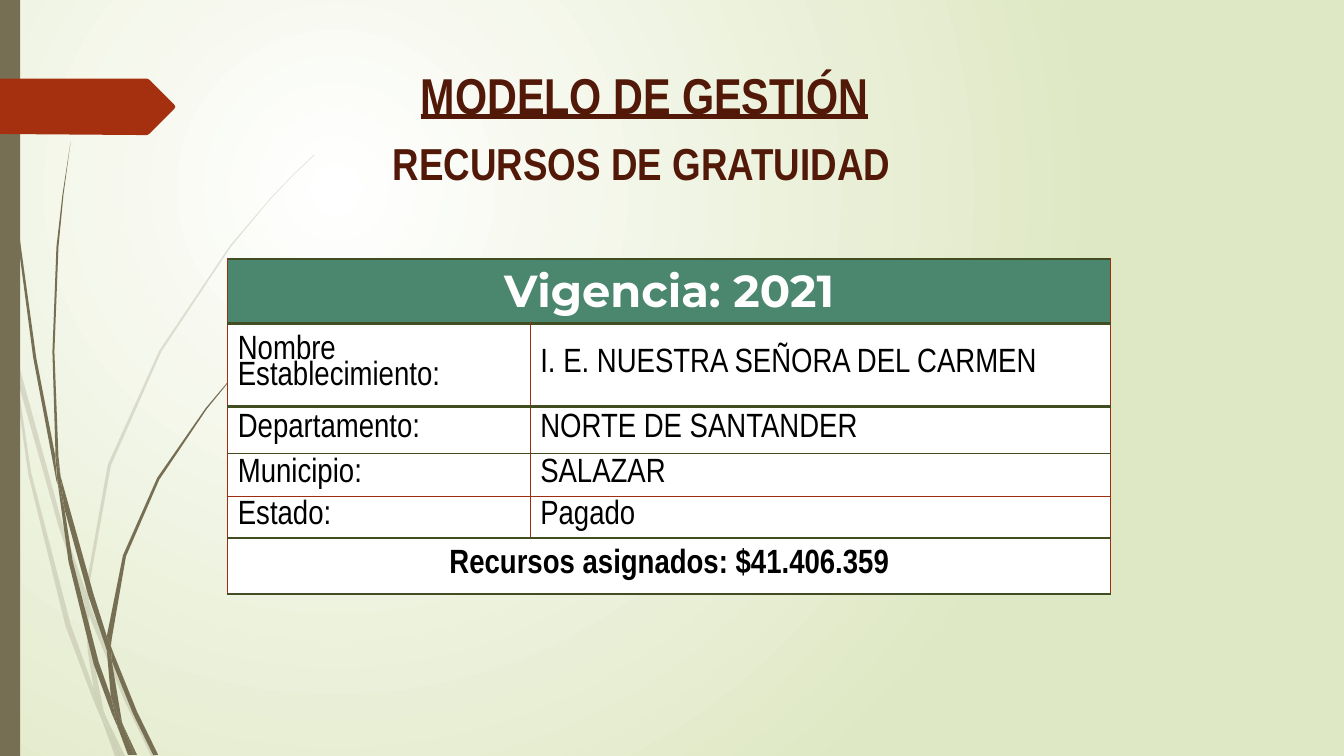
"""Build the slide on resources assigned to a school."""
import pptx
import pptx.dml.color
import pptx.enum.shapes
import pptx.enum.text
import pptx.oxml
import pptx.oxml.ns
import pptx.util
from lxml import etree

Pt = pptx.util.Pt
RGBColor = pptx.dml.color.RGBColor
ALIGN = pptx.enum.text.PP_ALIGN
ANCHOR = pptx.enum.text.MSO_ANCHOR
qn = pptx.oxml.ns.qn

WHITE = RGBColor(0xFF, 0xFF, 0xFF)
BLACK = RGBColor(0x00, 0x00, 0x00)
PALE_GREEN = RGBColor(0xDF, 0xE8, 0xC4)
OLIVE = RGBColor(0x76, 0x6F, 0x54)
RED = RGBColor(0xA5, 0x30, 0x10)
RULE_RED = RGBColor(0x9E, 0x2E, 0x0F)
RULE_GREEN = RGBColor(0x42, 0x4D, 0x22)
HEADER_GREEN = RGBColor(0x4B, 0x86, 0x6E)
MAROON = RGBColor(0x52, 0x18, 0x08)

OUTLINE_UNIT = Pt(0.72)
PALE_STRANDS = [
    [(11, 350), (9, 322), (0, 282), (0, 299), (10, 344)],
    [(58, 522), (84, 599), (85, 586), (62, 520), (14, 345), (17, 376)],
    [(92, 607), (88, 596), (88, 610), (123, 694), (150, 750), (155, 750), (127, 692)],
    [(119, 750), (124, 750), (105, 711)],
    [(93, 683), (70, 619), (31, 469), (17, 376), (11, 350), (28, 470), (65, 621),
     (92, 693), (101, 714), (99, 707)],
    [(84, 599), (87, 646), (93, 683), (96, 692), (105, 711), (103, 706), (91, 646),
     (88, 610), (88, 608)],
    [(88, 584), (110, 462), (160, 349), (229, 245), (268, 198), (290, 175), (312, 154),
     (312, 153), (289, 175), (268, 197), (228, 244), (158, 348), (107, 461), (85, 584),
     (85, 586), (88, 596)],
    [(101, 714), (114, 750), (119, 750)],
    [(88, 608), (88, 610), (88, 596), (85, 586), (84, 599)],
    [(96, 692), (93, 683), (99, 707), (101, 714), (119, 750), (105, 711)],
]
DARK_STRANDS = [
    [(7, 110), (17, 233), (33, 355), (56, 477), (57, 481), (55, 457), (55, 453),
     (36, 355), (19, 232), (8, 109), (5, 48), (4, 0), (3, 0), (4, 48)],
    [(88, 592), (106, 645), (106, 633), (106, 631), (93, 590), (60, 472), (64, 505)],
    [(113, 649), (110, 641), (111, 656), (132, 708), (152, 749), (157, 749), (136, 706)],
    [(110, 691), (98, 657), (72, 556), (64, 505), (57, 477), (68, 557), (93, 659),
     (111, 708), (117, 722), (116, 717)],
    [(60, 472), (58, 453), (54, 349), (58, 245), (63, 193), (70, 141), (62, 193),
     (56, 245), (52, 349), (55, 449)],
    [(133, 749), (136, 749), (122, 719)],
    [(57, 477), (64, 505), (60, 472), (55, 449), (55, 453)],
    [(111, 633), (125, 552), (158, 476), (205, 406), (231, 374), (245, 359), (261, 344),
     (260, 344), (245, 358), (231, 373), (204, 405), (156, 474), (122, 551), (106, 631),
     (110, 641)],
    [(117, 722), (127, 749), (131, 749)],
    [(106, 645), (110, 691), (116, 706), (122, 719), (121, 716), (111, 656), (109, 651)],
    [(106, 645), (109, 651), (111, 656), (110, 641), (106, 631), (106, 633)],
    [(116, 706), (110, 691), (116, 717), (117, 722), (130, 749), (133, 749), (122, 719)],
]
ARROW = [(173, 108), (148, 133), (146, 134), (136, 134), (0, 133), (0, 78), (136, 78),
         (146, 78), (148, 79), (173, 104), (174, 106)]

COLUMN_WIDTHS = [216, 414.7]
ROW_HEIGHTS = [46, 59, 33.5, 30.7, 30, 40]
ROW_RULES = [(RULE_GREEN, 1.5), (RULE_GREEN, 2.25), (RULE_GREEN, 2.25), (RULE_GREEN, 0.75),
             (RULE_RED, 0.75), (RULE_GREEN, 1.5), (RULE_GREEN, 2.25)]
ROWS = [
    ["Vigencia: 2021"],
    ["Nombre Establecimiento:", "I. E. NUESTRA SEÑORA DEL CARMEN"],
    ["Departamento:", "NORTE DE SANTANDER"],
    ["Municipio:", "SALAZAR"],
    ["Estado:", "Pagado"],
    ["Recursos asignados: $41.406.359"],
]


def paint_background(page):
    """Fill the page with a radial gradient centred in its upper left quarter."""
    fill = page.background.fill
    fill.gradient()
    for stop, color in zip(fill.gradient_stops, (WHITE, PALE_GREEN)):
        stop.color.rgb = color
    gradient = page.element.find(".//" + qn("a:gradFill"))
    gradient.remove(gradient.find(qn("a:lin")))
    circle = etree.SubElement(gradient, qn("a:path"), path="circle")
    etree.SubElement(circle, qn("a:fillToRect"), l="25000", t="25000", r="75000", b="75000")


def paint_shape(shape, color, opacity=100):
    """Give a shape a plain fill without line or shadow."""
    shape.shadow.inherit = False
    shape.fill.solid()
    shape.fill.fore_color.rgb = color
    shape.line.fill.background()
    if opacity < 100:
        tint = shape.element.spPr.find(qn("a:solidFill"))[0]
        etree.SubElement(tint, qn("a:alpha"), val=str(opacity * 1000))


def add_outline(page, points, color, opacity=100):
    """Draw a closed outline through the points."""
    builder = page.shapes.build_freeform(*points[0], scale=OUTLINE_UNIT)
    builder.add_line_segments(points[1:], close=True)
    paint_shape(builder.convert_to_shape(), color, opacity)


def format_text(para, size, color, font="Arial Narrow", bold=True, underline=False):
    """Format every run of a paragraph."""
    for span in para.runs:
        span.font.name = font
        span.font.size = Pt(size)
        span.font.bold = bold
        span.font.underline = underline
        span.font.color.rgb = color


def add_heading(page, text, left, top, width, height, size, align, anchor, underline=False):
    """Add a bold one-line heading."""
    box = page.shapes.add_textbox(Pt(left), Pt(top), Pt(width), Pt(height))
    frame = box.text_frame
    frame.text = text
    frame.word_wrap = underline
    frame.vertical_anchor = anchor
    para = frame.paragraphs[0]
    para.alignment = align
    format_text(para, size, MAROON, underline=underline)


def set_borders(cell, above, below):
    """Draw the four borders of a cell."""
    side = (RULE_RED, 0.75)
    properties = cell._tc.get_or_add_tcPr()
    for tag, (color, width) in zip(("lnL", "lnR", "lnT", "lnB"), (side, side, above, below)):
        line = etree.SubElement(properties, qn("a:" + tag), w=str(Pt(width)))
        solid = etree.SubElement(line, qn("a:solidFill"))
        etree.SubElement(solid, qn("a:srgbClr"), val=str(color))


def add_resource_table(page):
    """Add the table of school data and assigned resources."""
    frame = page.shapes.add_table(len(ROWS), len(COLUMN_WIDTHS), Pt(162.7), Pt(185),
                                  Pt(sum(COLUMN_WIDTHS)), Pt(sum(ROW_HEIGHTS)))
    table = frame.table
    for column, width in zip(table.columns, COLUMN_WIDTHS):
        column.width = Pt(width)
    for index, texts in enumerate(ROWS):
        table.rows[index].height = Pt(ROW_HEIGHTS[index])
        header = index == 0
        merged = len(texts) == 1
        for cell in table.rows[index].cells:
            set_borders(cell, ROW_RULES[index], ROW_RULES[index + 1])
            cell.fill.solid()
            cell.fill.fore_color.rgb = HEADER_GREEN if header else WHITE
            cell.vertical_anchor = ANCHOR.MIDDLE
        if merged:
            table.cell(index, 0).merge(table.cell(index, 1))
        for column, text in enumerate(texts):
            cell = table.cell(index, column)
            cell.text_frame.text = text
            para = cell.text_frame.paragraphs[0]
            para.alignment = ALIGN.CENTER if merged else ALIGN.LEFT
            if header:
                format_text(para, 32, WHITE, font="Montserrat")
            else:
                para.line_spacing = 0.8
                format_text(para, 24, BLACK, bold=merged)


def main():
    """Build and save the deck."""
    deck = pptx.Presentation()
    deck.slide_width, deck.slide_height = Pt(960), Pt(540)
    page = deck.slides.add_slide(deck.slide_layouts[6])
    paint_background(page)
    for strand in PALE_STRANDS:
        add_outline(page, strand, OLIVE, 20)
    for strand in DARK_STRANDS:
        add_outline(page, strand, OLIVE)
    band = page.shapes.add_shape(pptx.enum.shapes.MSO_SHAPE.RECTANGLE, 0, 0, Pt(14.4), Pt(540))
    paint_shape(band, OLIVE)
    add_outline(page, ARROW, RED)
    add_resource_table(page)
    add_heading(page, "MODELO DE GESTIÓN", 289.4, 39.6, 342, 52.6, 36,
                ALIGN.CENTER, ANCHOR.BOTTOM, underline=True)
    add_heading(page, "RECURSOS DE GRATUIDAD", 273.6, 93.6, 373.7, 46, 32,
                ALIGN.LEFT, ANCHOR.TOP)
    deck.save("out.pptx")


if __name__ == "__main__":
    main()
